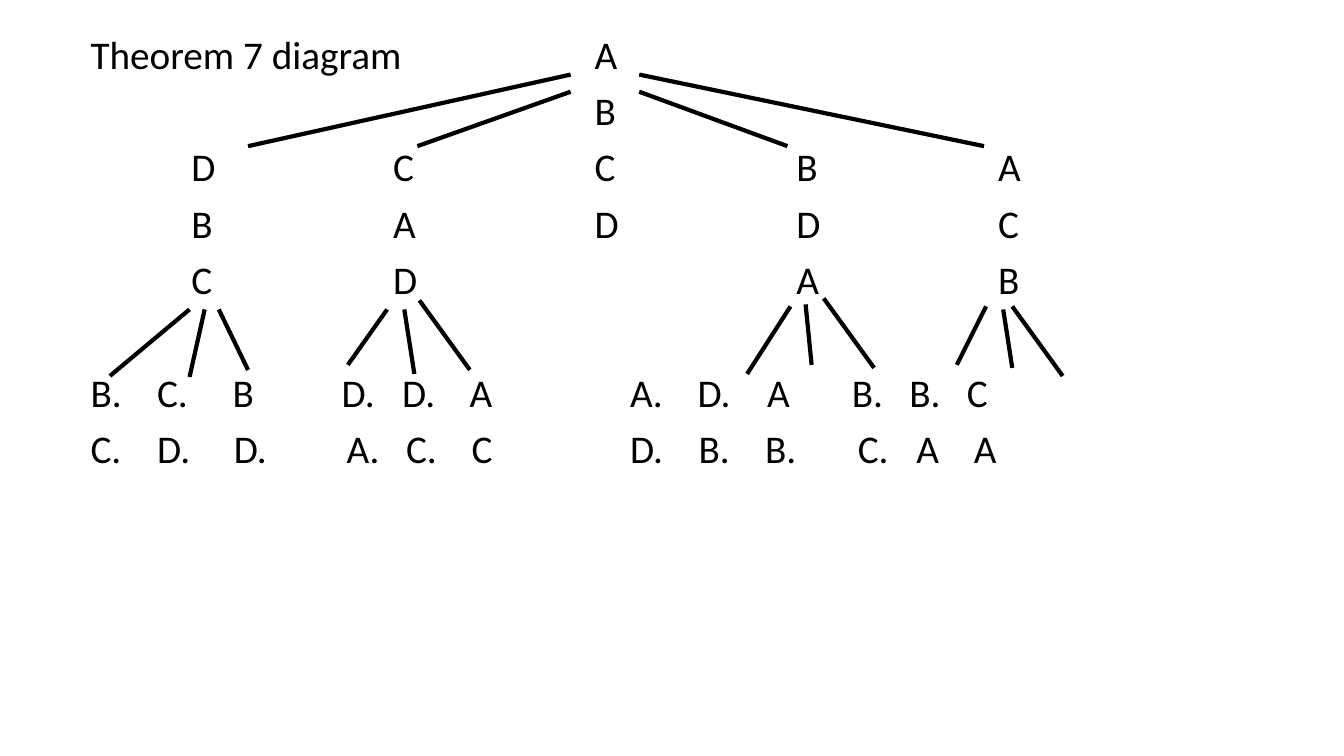
from pptx import Presentation
from pptx.dml.color import RGBColor
from pptx.enum.shapes import MSO_CONNECTOR as CONN
from pptx.enum.text import MSO_AUTO_SIZE as AUTO, MSO_ANCHOR as ANCHOR
from pptx.oxml.ns import qn
from pptx.util import Inches, Pt
from lxml.etree import SubElement

COLORS = {"ink": "000000", "paper": "FFFFFF"}
FONT = {"name": "Calibri", "size": Pt(28), "bold": False}
PARA = {"line_spacing": 0.9, "space_before": Pt(10)}
LEVEL_GAP = Pt(50.5)  # space between the tree nodes and their leaves

# Tab stops in inches from the left edge of the text
COLUMNS = [1, 3, 5, 7, 9]
LEAF_STOPS = [
    [0, 0.66, 1.41, 2.49, 3.09, 3.76, 5.35, 6.02, 6.71, 7.55, 8.12, 8.69],
    [0, 0.66, 1.42, 2.54, 3.13, 3.78, 5.35, 6.03, 6.69, 7.61, 8.19, 8.76],
]
ROWS = [
    ([0, 5], ["Theorem 7 diagram", "A"]),
    ([5], ["B"]),
    (COLUMNS, "DCCBA"),
    (COLUMNS, "BADDC"),
    ([1, 3, 7, 9], "CDAB"),
    (LEAF_STOPS[0], "B. C. B D. D. A A. D. A B. B. C".split()),
    (LEAF_STOPS[1], "C. D. D. A. C. C D. B. B. C. A A".split()),
]

# Branches as x1, y1, x2, y2 from the corner of the diagram box
ROOT_BRANCHES = [
    (4.86, 0.44, 1.66, 1.15), (4.86, 0.61, 3.34, 1.15),
    (5.54, 0.61, 7.01, 1.15), (5.54, 0.44, 8.96, 1.15),
]
LEAF_BRANCHES = [
    (1.08, 2.77, 0.29, 3.43), (1.23, 2.77, 1.08, 3.44), (1.37, 2.77, 1.66, 3.37),
    (3.04, 2.77, 2.65, 3.32), (3.21, 2.77, 3.31, 3.41), (3.36, 2.68, 3.86, 3.37),
    (7.04, 2.74, 6.61, 3.41), (7.19, 2.72, 7.25, 3.32), (7.37, 2.66, 7.87, 3.35),
    (8.98, 2.74, 8.69, 3.32), (9.15, 2.77, 9.24, 3.35), (9.24, 2.74, 9.74, 3.43),
]


def set_all(obj, values):
    for name, value in values.items():
        setattr(obj, name, value)


def add_row(p, stops, labels):
    """Fill one paragraph, with each label at its tab stop."""
    set_all(p, PARA)
    tabs = SubElement(p._p.get_or_add_pPr(), qn("a:tabLst"))
    for stop in filter(None, stops):
        SubElement(tabs, qn("a:tab"), pos=str(Inches(stop)), algn="l")
    r = p.add_run()
    r.text = "".join(("\t" if stop else "") + label
                     for stop, label in zip(stops, labels))
    set_all(r.font, FONT)
    r.font.color.rgb = RGBColor.from_string(COLORS["ink"])


def add_labels(slide, *box):
    """Place the heading and the tree labels in one text box."""
    tf = slide.shapes.add_textbox(*map(Inches, box)).text_frame
    set_all(tf, {"word_wrap": True, "auto_size": AUTO.NONE,
                 "vertical_anchor": ANCHOR.TOP})
    for i, (stops, labels) in enumerate(ROWS):
        p = tf.add_paragraph() if i else tf.paragraphs[0]
        add_row(p, stops, labels)
        if stops is LEAF_STOPS[0]:
            p.space_before = LEVEL_GAP


def add_branches(slide, left, top):
    """Draw the lines between the levels of the tree."""
    for x1, y1, x2, y2 in ROOT_BRANCHES + LEAF_BRANCHES:
        line = slide.shapes.add_connector(
            CONN.STRAIGHT, Inches(left + x1), Inches(top + y1),
            Inches(left + x2), Inches(top + y2))
        line.line.width = Pt(3)
        line.line.color.rgb = RGBColor.from_string(COLORS["ink"])
        SubElement(line._element.spPr, qn("a:effectLst"))


def add_tree_slide(prs, left, top, width, height):
    # The heading shares a line with the root, so the layout is blank
    slide = prs.slides.add_slide(prs.slide_layouts[6])
    fill = slide.background.fill
    fill.solid()
    fill.fore_color.rgb = RGBColor.from_string(COLORS["paper"])
    add_labels(slide, left, top, width, height)
    add_branches(slide, left, top)


def main():
    prs = Presentation()
    prs.slide_width, prs.slide_height = Inches(13.33), Inches(7.5)
    add_tree_slide(prs, 0.8, 0.3, 11.62, 6.86)
    prs.save("out.pptx")


if __name__ == "__main__":
    main()
